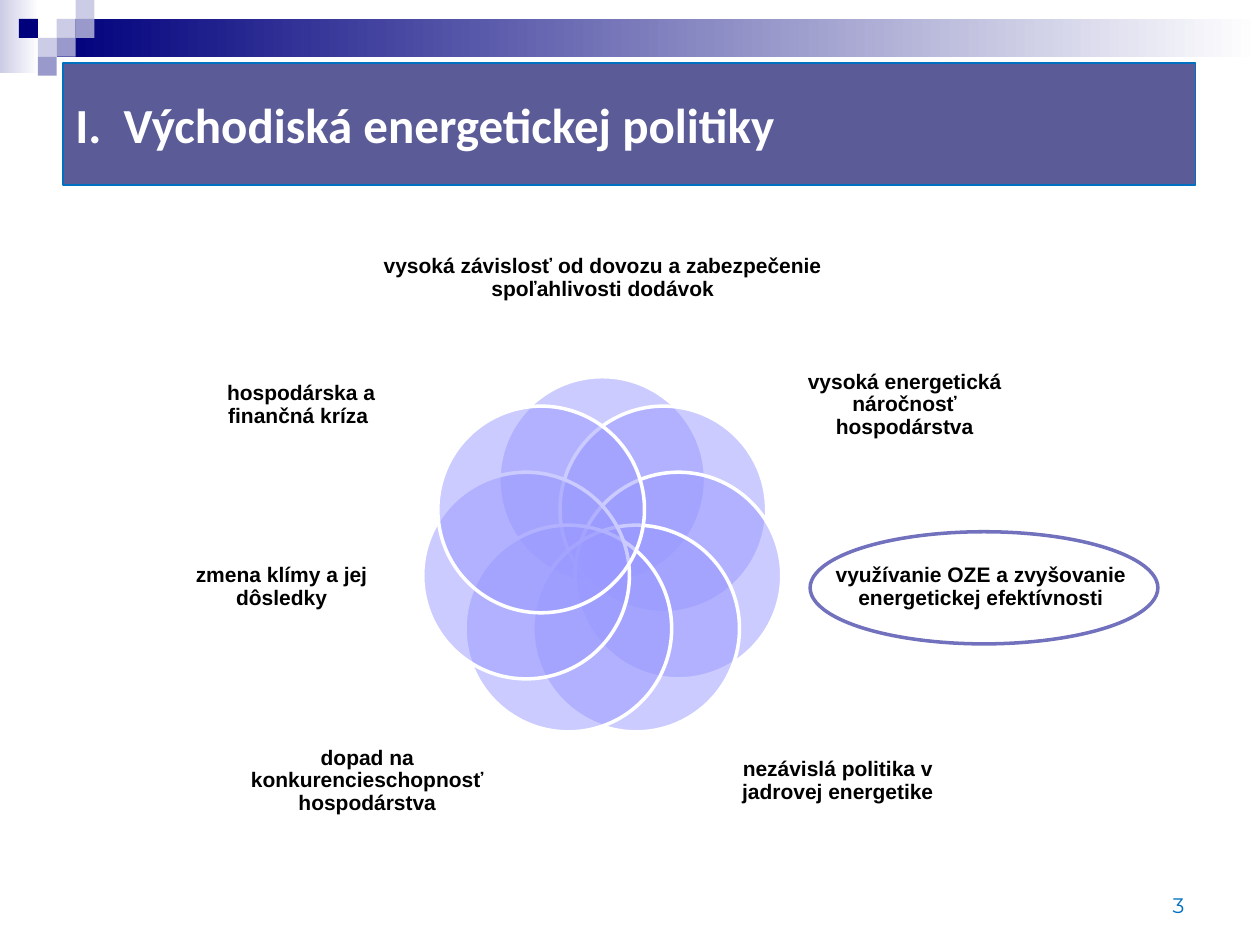
import math

from lxml import etree
from pptx import Presentation
from pptx import util as u
from pptx.dml.color import RGBColor
from pptx.enum import shapes, text
from pptx.oxml.ns import qn

COLORS = {
    "navy": "00007D",
    "lavender": "CCCCE6",
    "violet": "9999CC",
    "petal": "9999FF",
    "banner": "5B5B98",
    "ring": "7171BD",
    "blue": "0070C0",
    "white": "FFFFFF",
    "black": "000000",
}
RECT = shapes.MSO_SHAPE.RECTANGLE
OVAL = shapes.MSO_SHAPE.OVAL
ALIGN = text.PP_ALIGN
ANCHOR = text.MSO_ANCHOR


def rgb(name):
    return RGBColor.from_string(COLORS[name])


class SlideBuilder:
    """Holds the text style and the slide being built."""

    style = {"name": "Arial", "size": u.Pt(12), "bold": True}

    def __init__(self, page):
        self.page = page

    def shape(self, kind, place, fill=None, line=None, width=1, alpha=None):
        item = self.page.shapes.add_shape(kind, *map(u.Inches, place))
        item.shadow.inherit = False
        if isinstance(fill, tuple):
            item.fill.gradient()
            item.fill.gradient_angle = 0
            for stop, name in zip(item.fill.gradient_stops, fill):
                stop.color.rgb = rgb(name)
        elif fill:
            item.fill.solid()
            item.fill.fore_color.rgb = rgb(fill)
        else:
            item.fill.background()
        if alpha is not None:
            color = item.element.spPr.find(".//" + qn("a:srgbClr"))
            etree.SubElement(color, qn("a:alpha"), val=str(alpha * 1000))
        if line:
            item.line.color.rgb = rgb(line)
            item.line.width = u.Pt(width)
        else:
            item.line.fill.background()
        return item

    def put_text(self, box, words, color="black", align=ALIGN.CENTER,
                 anchor=ANCHOR.MIDDLE, spacing=1.0, **changes):
        frame = box.text_frame
        frame.word_wrap = True
        frame.vertical_anchor = anchor
        para = frame.paragraphs[0]
        para.alignment = align
        para.line_spacing = spacing
        span = para.add_run()
        span.text = words
        for key, value in {**self.style, **changes}.items():
            setattr(span.font, key, value)
        span.font.color.rgb = rgb(color)

    def textbox(self, place, words, inset=None, **changes):
        box = self.page.shapes.add_textbox(*map(u.Inches, place))
        if inset is not None:
            for side in ("left", "top", "right", "bottom"):
                setattr(box.text_frame, "margin_" + side, u.Inches(inset))
        self.put_text(box, words, **changes)


def main():
    deck = Presentation()
    deck.slide_width, deck.slide_height = u.Inches(10), u.Inches(7.5)
    page = deck.slides.add_slide(deck.slide_layouts[6])
    build = SlideBuilder(page)

    # Gradient bands and small squares at the top
    build.shape(RECT, (0, 0, 0.31, 0.58), ("lavender", "white"))
    build.shape(RECT, (0.45, 0.15, 9.55, 0.3), ("navy", "white"))
    tile = 0.15
    for column, row, color in (
        (3, 1, "lavender"), (4, 0, "lavender"), (4, 1, "violet"),
        (2, 2, "lavender"), (1, 1, "navy"), (3, 2, "violet"), (2, 3, "violet"),
    ):
        build.shape(RECT, (column * tile, row * tile, tile, tile), color)

    # Overlapping circles, clockwise from the top, each with its label
    labels = (
        ((2.81, 1.7, 3.95, 1.01),
         "vysoká závislosť od dovozu a zabezpečenie spoľahlivosti dodávok"),
        ((6.29, 2.66, 1.78, 1.11), "vysoká energetická náročnosť hospodárstva"),
        ((6.48, 4.07, 2.61, 1.18),
         "využívanie OZE a zvyšovanie energetickej efektívnosti"),
        ((5.71, 5.66, 1.88, 1.08), "nezávislá politika v jadrovej energetike"),
        ((1.72, 5.66, 2.39, 1.08), "dopad na konkurencieschopnosť hospodárstva"),
        ((1.36, 4.07, 1.75, 1.18), "zmena klímy a jej dôsledky"),
        ((1.5, 2.66, 1.78, 1.11), "hospodárska a finančná kríza "),
    )
    center_x, center_y, orbit, size = 4.78, 4.43, 0.62, 1.64
    for index, (place, words) in enumerate(labels):
        angle = 2 * math.pi * index / len(labels)
        left = center_x + orbit * math.sin(angle) - size / 2
        top = center_y - orbit * math.cos(angle) - size / 2
        build.shape(OVAL, (left, top, size, size), "petal", "white", 2, alpha=50)
        build.textbox(place, words, inset=0, spacing=0.9)

    # Slide number
    build.textbox((7.17, 6.83, 2.33, 0.5), "3", color="blue", align=ALIGN.RIGHT,
                  anchor=ANCHOR.BOTTOM, name="Montserrat", bold=False)

    # Title banner
    banner = build.shape(RECT, (0.5, 0.5, 8.99, 0.97), "banner", "blue", 0.75)
    build.put_text(banner, "I.  Východiská energetickej politiky", color="white",
                   align=ALIGN.LEFT, name="Calibri", size=u.Pt(28))

    # Ring around the highlighted label
    build.shape(OVAL, (6.43, 4.22, 2.76, 0.89), line="ring", width=2)

    deck.save("out.pptx")


if __name__ == "__main__":
    main()
